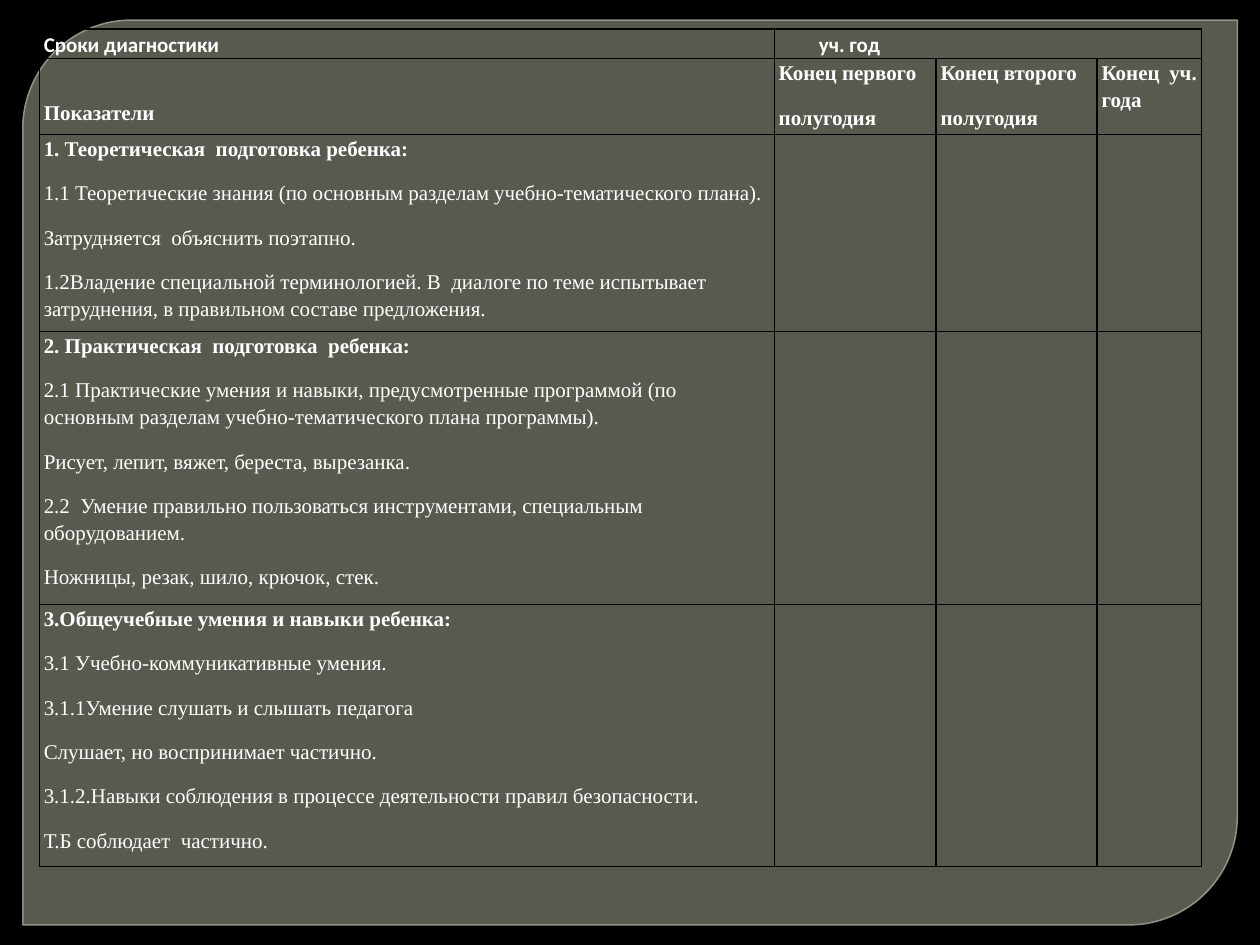
from dataclasses import dataclass

from lxml.etree import SubElement
from pptx import Presentation
from pptx.dml.color import RGBColor
from pptx.enum.shapes import MSO_SHAPE
from pptx.enum.text import PP_ALIGN
from pptx.oxml.ns import qn
from pptx.util import Pt


@dataclass(frozen=True)
class Theme:
    background: str = "000000"
    panel: str = "888B7B"
    panel_line: str = "9DA090"
    border: str = "000000"
    text: str = "FFFFFF"
    body_font: str = "Times New Roman"
    period_font: str = "Calibri"
    size: float = 12
    space_after: float = 10
    line_spacing: float = 1.15
    cell_inset: float = 2.5


THEME = Theme()
COLUMN_WIDTHS = [420, 92.5, 92, 59.5]
ROW_HEIGHTS = [10.8, 43.4, 112.6, 156, 149.6]

HEADINGS = [
    ["Показатели"],
    ["Конец первого", "полугодия"],
    ["Конец второго", "полугодия"],
    ["Конец уч. года"],
]
SECTIONS = [
    [
        "1. Теоретическая  подготовка ребенка:",
        "1.1 Теоретические знания (по основным разделам учебно-тематического плана).",
        "Затрудняется  объяснить поэтапно.",
        "1.2Владение специальной терминологией. В  диалоге по теме испытывает "
        "затруднения, в правильном составе предложения.",
    ],
    [
        "2. Практическая  подготовка  ребенка:",
        "2.1 Практические умения и навыки, предусмотренные программой "
        "(по основным разделам учебно-тематического плана программы).",
        "Рисует, лепит, вяжет, береста, вырезанка.",
        "2.2  Умение правильно пользоваться инструментами, специальным оборудованием.",
        "Ножницы, резак, шило, крючок, стек.",
    ],
    [
        "3.Общеучебные умения и навыки ребенка:",
        "3.1 Учебно-коммуникативные умения.",
        "3.1.1Умение слушать и слышать педагога",
        "Слушает, но воспринимает частично.",
        "3.1.2.Навыки соблюдения в процессе деятельности правил безопасности.",
        "Т.Б соблюдает  частично.",
    ],
]


def color(value):
    return RGBColor.from_string(value)


def set_opacity(fill_element, percent):
    color_element = fill_element.find(".//" + qn("a:srgbClr"))
    SubElement(color_element, qn("a:alpha"), val=str(percent * 1000))


def add_panel(page):
    panel = page.shapes.add_shape(
        MSO_SHAPE.ROUND_2_DIAG_RECTANGLE, Pt(13), Pt(11.5), Pt(694), Pt(517)
    )
    panel.shadow.inherit = False
    panel.adjustments[0] = 0.12
    panel.adjustments[1] = 0
    panel.fill.solid()
    panel.fill.fore_color.rgb = color(THEME.panel)
    panel.line.color.rgb = color(THEME.panel_line)
    panel.line.width = Pt(0.87)
    properties = panel.element.spPr
    set_opacity(properties.find(qn("a:solidFill")), 65)
    set_opacity(properties.find(qn("a:ln")), 88)


def format_cell(cell):
    cell.margin_left = cell.margin_right = Pt(THEME.cell_inset)
    cell.margin_top = cell.margin_bottom = Pt(0)
    properties = cell._tc.get_or_add_tcPr()
    for side in ("L", "R", "T", "B"):
        line = SubElement(properties, qn(f"a:ln{side}"), w=str(Pt(1)))
        fill = SubElement(line, qn("a:solidFill"))
        SubElement(fill, qn("a:srgbClr"), val=THEME.border)
    cell.fill.background()


def add_table(page):
    frame = page.shapes.add_table(
        len(ROW_HEIGHTS), len(COLUMN_WIDTHS), Pt(22.5), Pt(16.6),
        Pt(sum(COLUMN_WIDTHS)), Pt(sum(ROW_HEIGHTS)),
    )
    table = frame.table
    table.first_row = table.horz_banding = False
    for column, width in zip(table.columns, COLUMN_WIDTHS):
        column.width = Pt(width)
    for row, height in zip(table.rows, ROW_HEIGHTS):
        row.height = Pt(height)
        for cell in row.cells:
            format_cell(cell)
    table.cell(0, 1).merge(table.cell(0, 3))
    return table


def write_cell(cell, lines, bold_count, font=THEME.body_font, align=PP_ALIGN.JUSTIFY):
    for index, text in enumerate(lines):
        frame = cell.text_frame
        para = frame.add_paragraph() if index else frame.paragraphs[0]
        para.alignment = align
        para.line_spacing = THEME.line_spacing
        para.space_after = Pt(THEME.space_after)
        span = para.add_run()
        span.text = text
        span.font.name = font
        span.font.size = Pt(THEME.size)
        span.font.bold = index < bold_count
        span.font.color.rgb = color(THEME.text)


def fill_table(table):
    write_cell(table.cell(0, 0), ["Сроки диагностики"], 1, THEME.period_font)
    write_cell(table.cell(0, 1), ["уч. год"], 1, THEME.period_font)
    table.cell(0, 1).margin_left = Pt(25.5)
    for column, lines in enumerate(HEADINGS):
        write_cell(table.cell(1, column), lines, len(lines))
    table.cell(1, 0).margin_top = Pt(23)
    for row, lines in enumerate(SECTIONS, start=2):
        write_cell(table.cell(row, 0), lines, 1, align=PP_ALIGN.LEFT)


def main():
    deck = Presentation()
    deck.slide_width, deck.slide_height = Pt(720), Pt(540)
    page = deck.slides.add_slide(deck.slide_layouts[6])
    page.background.fill.solid()
    page.background.fill.fore_color.rgb = color(THEME.background)
    add_panel(page)
    fill_table(add_table(page))
    deck.save("out.pptx")


if __name__ == "__main__":
    main()
